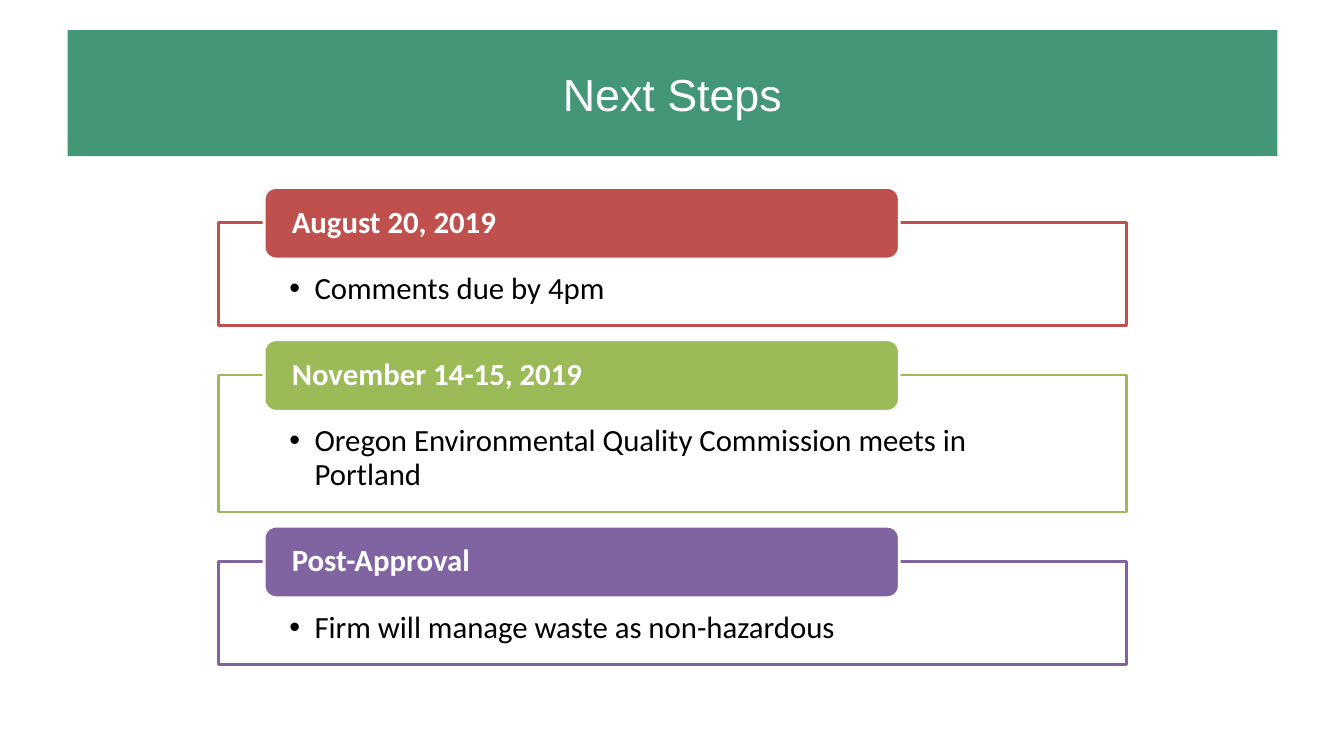
"""Builds the "Next Steps" slide: a title band above three dated milestones."""
from pptx import Presentation
from pptx.dml.color import RGBColor
from pptx.enum.shapes import MSO_SHAPE as Shape
from pptx.enum.text import MSO_ANCHOR as Anchor, PP_ALIGN as Align
from pptx.oxml.ns import qn
from pptx.util import Inches, Pt
from lxml.etree import SubElement

WHITE = RGBColor(0xFF, 0xFF, 0xFF)
BLACK = RGBColor(0x00, 0x00, 0x00)
GREEN = RGBColor(0x43, 0x97, 0x77)
RED = RGBColor(0xC0, 0x50, 0x4D)
LIME = RGBColor(0x9B, 0xBB, 0x59)
PURPLE = RGBColor(0x80, 0x64, 0xA2)


def add_block(kind, left, top, width, height, fill, line=None):
    block = slide.shapes.add_shape(
        kind, Inches(left), Inches(top), Inches(width), Inches(height))
    block.shadow.inherit = False
    block.fill.solid()
    block.fill.fore_color.rgb = fill
    if line is None:
        block.line.fill.background()
    else:
        block.line.color.rgb = line
        block.line.width = Pt(2)
    return block


def write(block, text, size=22, font="Calibri", color=WHITE, bold=False,
          align=Align.LEFT, anchor=Anchor.MIDDLE, spacing=0.9,
          insets=(0.24, 0, 0.24, 0), bullet=False):
    frame = block.text_frame
    frame.word_wrap = True
    frame.vertical_anchor = anchor
    (frame.margin_left, frame.margin_top,
     frame.margin_right, frame.margin_bottom) = map(Inches, insets)
    paragraph = frame.paragraphs[0]
    paragraph.alignment = align
    paragraph.line_spacing = spacing
    run = paragraph.add_run()
    run.text = text
    run.font.size = Pt(size)
    run.font.name = font
    run.font.bold = bold
    run.font.color.rgb = color
    if bullet:
        properties = paragraph._p.get_or_add_pPr()
        properties.set("marL", str(Inches(0.25)))
        properties.set("indent", str(Inches(-0.25)))
        SubElement(properties, qn("a:buFont")).set("typeface", "Arial")
        SubElement(properties, qn("a:buChar")).set("char", "•")


prs = Presentation()
prs.slide_width = Inches(13.33)
prs.slide_height = Inches(7.5)
slide = prs.slides.add_slide(prs.slide_layouts[6])

title_band = add_block(Shape.RECTANGLE, 0.67, 0.3, 12, 1.25, GREEN)
write(title_band, "Next Steps", size=32, font="Arial", align=Align.CENTER,
      spacing=1.0, insets=(0.1, 0.05, 0.1, 0.05))

milestones = [
    ("August 20, 2019", "Comments due by 4pm", RED, 1.02),
    ("November 14-15, 2019",
     "Oregon Environmental Quality Commission meets in Portland", LIME, 1.36),
    ("Post-Approval", "Firm will manage waste as non-hazardous", PURPLE, 1.02),
]
GAP = 0.49
top = 2.21
for date, action, color, height in milestones:
    action_box = add_block(Shape.RECTANGLE, 2.17, top, 9, height, WHITE, color)
    write(action_box, action, color=BLACK, anchor=Anchor.TOP,
          insets=(0.7, 0.5, 0.7, 0.17), bullet=True)
    date_tab = add_block(
        Shape.ROUNDED_RECTANGLE, 2.62, top - 0.35, 6.3, 0.71, color, WHITE)
    write(date_tab, date, bold=True)
    top += height + GAP

prs.save("out.pptx")
